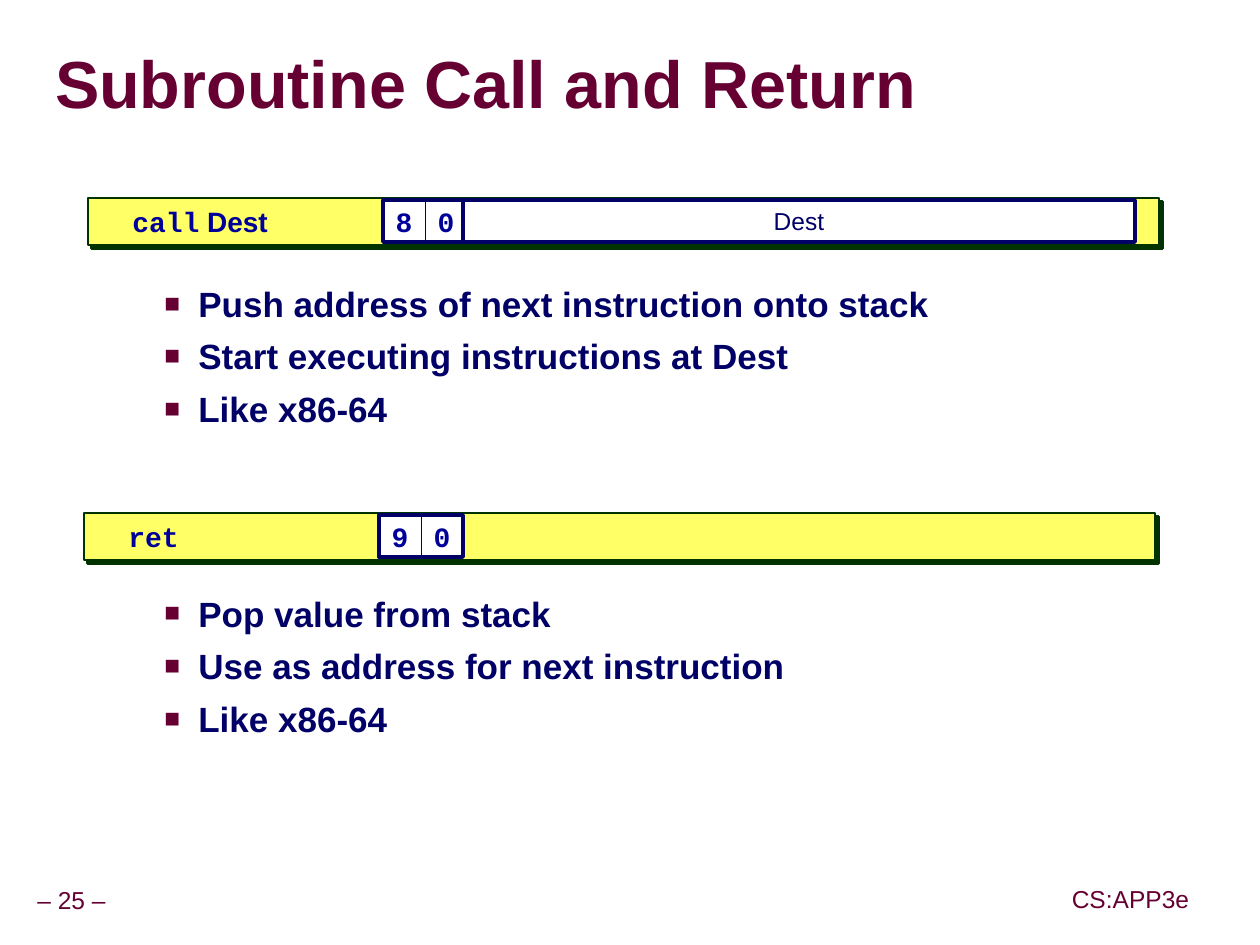
from lxml import etree
from pptx import Presentation
from pptx import util as u
from pptx.dml.color import RGBColor
from pptx.enum import shapes, text
from pptx.oxml.ns import qn

PX = 914400 // 126
MAROON = RGBColor(0x66, 0x00, 0x33)
NAVY = RGBColor(0x00, 0x00, 0x66)
BLUE = RGBColor(0x00, 0x00, 0x99)
GREEN = RGBColor(0x00, 0x33, 0x00)
YELLOW = RGBColor(0xFF, 0xFF, 0x66)
WHITE = RGBColor(0xFF, 0xFF, 0xFF)
GRAY = RGBColor(0x96, 0x96, 0x96)
CODE = "Courier New"


def write(para, words, size=16, font="Arial", color=BLUE, bold=True,
          align=text.PP_ALIGN.LEFT, spacing=None):
    para.alignment = align
    if spacing:
        para.line_spacing = spacing
    span = para.add_run()
    span.text = words
    span.font.size = u.Pt(size)
    span.font.name = font
    span.font.bold = bold
    span.font.color.rgb = color
    return span


def add_box(parent, left, top, width, height, fill=None, line=None, weight=1):
    if line is None:
        box = parent.add_textbox(left * PX, top * PX, width * PX, height * PX)
    else:
        box = parent.add_shape(shapes.MSO_SHAPE.RECTANGLE,
                               left * PX, top * PX, width * PX, height * PX)
        box.shadow.inherit = False
        box.line.color.rgb = line
        box.line.width = u.Pt(weight)
        if fill is None:
            box.fill.background()
        else:
            box.fill.solid()
            box.fill.fore_color.rgb = fill
    box.text_frame.word_wrap = False
    box.text_frame.vertical_anchor = text.MSO_ANCHOR.MIDDLE
    return box


deck = Presentation()
deck.slide_width = u.Inches(10)
deck.slide_height = u.Inches(7.5)
page = deck.slides.add_slide(deck.slide_layouts[5])
center = text.PP_ALIGN.CENTER

for words, left, top, width in [("– 25 –", 30, 882, 83), ("CS:APP3e", 1065, 881, 131)]:
    box = add_box(page.shapes, left, top, width, 40)
    frame = box.text_frame
    frame.margin_left = frame.margin_right = u.Inches(0.05)
    write(frame.paragraphs[0], words, size=14, color=MAROON, bold=False,
          align=center, spacing=0.9)

title = page.shapes.title
title.left, title.top, title.width, title.height = [n * PX for n in (55, 34, 1201, 107)]
frame = title.text_frame
frame.margin_left = frame.margin_right = frame.margin_top = frame.margin_bottom = 0
frame.vertical_anchor = text.MSO_ANCHOR.MIDDLE
frame.word_wrap = True
frame.auto_size = text.MSO_AUTO_SIZE.NONE
span = write(frame.paragraphs[0], "Subroutine Call and Return", size=38,
             color=MAROON, spacing=0.87)
title_effects = etree.Element(qn("a:effectLst"))
span.font._element.find(qn("a:solidFill")).addnext(title_effects)
shadows = [(title_effects, GRAY)]

body = add_box(page.shapes, 84, 276, 1062, 470)
body.text_frame.word_wrap = True
body.text_frame.vertical_anchor = text.MSO_ANCHOR.TOP
bullets = [
    ("Push address of next instruction onto stack", 0),
    ("Start executing instructions at Dest", 6),
    ("Like x86-64", 6),
    ("Pop value from stack", 93),
    ("Use as address for next instruction", 6),
    ("Like x86-64", 6),
]
for index, (words, gap) in enumerate(bullets):
    para = body.text_frame.paragraphs[0] if index == 0 else body.text_frame.add_paragraph()
    write(para, words, size=20, color=NAVY)
    para.space_before = u.Pt(gap)
    props = para._p.get_or_add_pPr()
    props.set("marL", str(u.Inches(0.81)))
    props.set("indent", str(u.Inches(-0.27)))
    bullet_color = etree.SubElement(props, qn("a:buClr"))
    etree.SubElement(bullet_color, qn("a:srgbClr"), val=str(MAROON))
    etree.SubElement(props, qn("a:buSzPct"), val="75000")
    etree.SubElement(props, qn("a:buFont"), typeface="Arial")
    etree.SubElement(props, qn("a:buChar"), char="■")

instructions = [
    (88, 198, [("call", CODE), (" Dest", "Arial")], "80", True),
    (84, 513, [("ret", CODE)], "90", False),
]
for left, top, label, digits, has_target in instructions:
    bar = add_box(page.shapes, left, top, 1071, 47, YELLOW, GREEN, 1.5)
    shadows.append((bar._element.spPr.find(qn("a:effectLst")), GREEN))
    name = add_box(page.shapes, left + 32, top + 2, 263, 42)
    for words, font in label:
        write(name.text_frame.paragraphs[0], words, font=font)
    opcode = page.shapes.add_group_shape().shapes
    for column, digit in enumerate(digits):
        cell = add_box(opcode, left + 295 + column * 42, top + 2, 42, 42, WHITE, NAVY, 0.5)
        write(cell.text_frame.paragraphs[0], digit, font=CODE, align=center)
    add_box(opcode, left + 295, top + 2, 84, 42, line=NAVY, weight=2.25)
    if has_target:
        target = add_box(page.shapes, left + 375, top + 2, 672, 42, WHITE, NAVY, 2.25)
        write(target.text_frame.paragraphs[0], "Dest", size=14, color=NAVY,
              bold=False, align=center)

for effects, color in shadows:
    shadow = etree.SubElement(effects, qn("a:outerShdw"), blurRad="0",
                              dist=str(u.Pt(2.8)), dir="2700000",
                              algn="ctr", rotWithShape="0")
    etree.SubElement(shadow, qn("a:srgbClr"), val=str(color))

deck.save("out.pptx")
